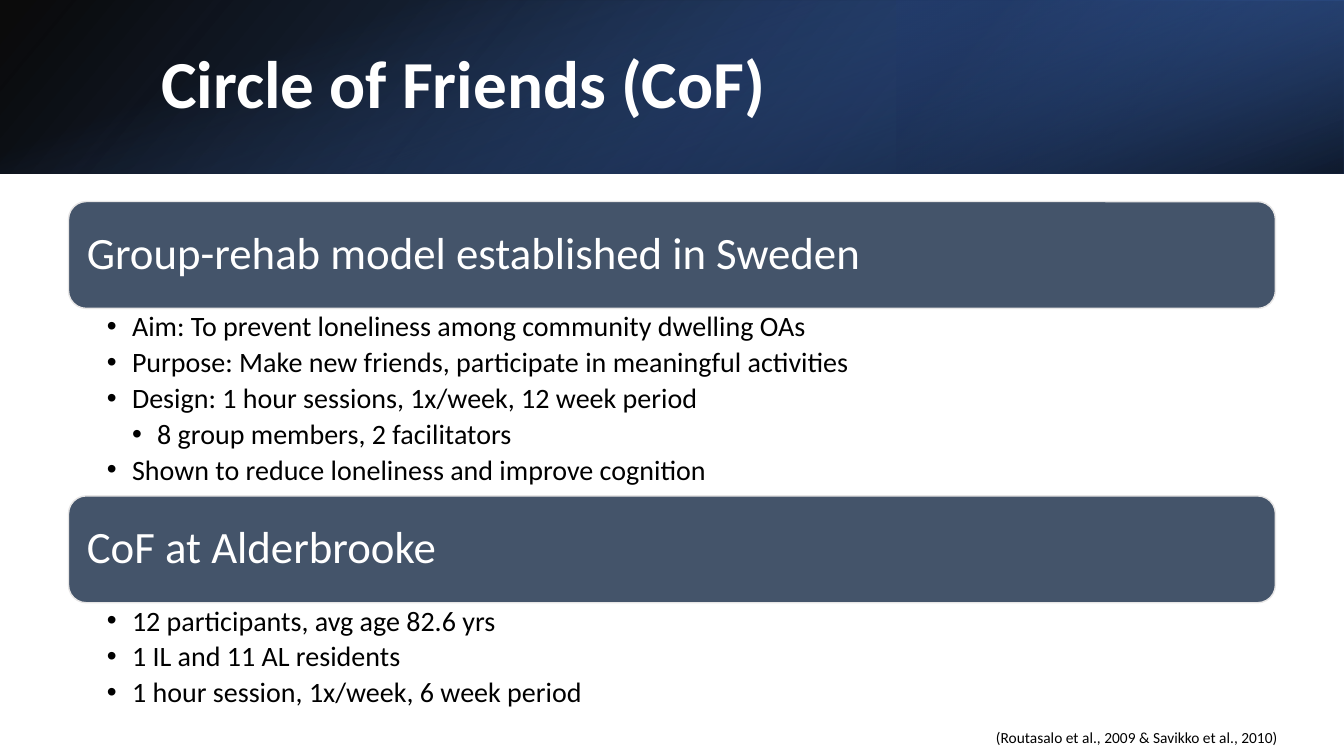
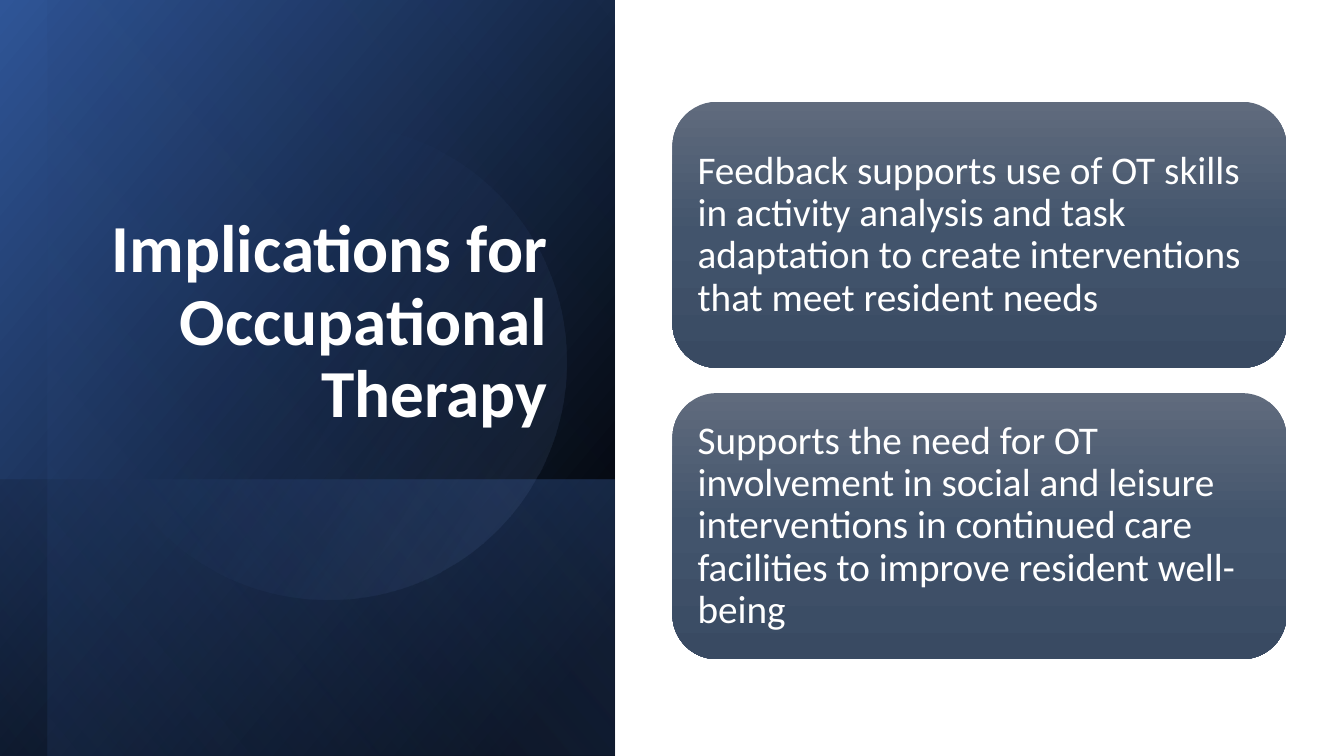
from lxml import etree
from pptx import Presentation
from pptx.dml.color import RGBColor
from pptx.enum import shapes, text
from pptx.oxml import parse_xml
from pptx.oxml.ns import nsdecls, qn
from pptx.util import Inches, Pt

COLORS = {
    "white": "FFFFFF", "black": "000000", "navy": "203864", "deep": "2F5597",
    "blue": "4472C4", "light": "8FAADC", "slate": "44546A", "edge": "E7E6E6",
    "card_top": "606B7D", "card_mid": "42546C", "card_end": "394A62",
}
FONT = "Calibri"
KIND = shapes.MSO_SHAPE


def add_panel(slide, kind, box, stops, angle=0, rotation=0, flip=False):
    """Add a shape filled by (position %, colour, opacity %) stops; one stop is solid."""
    panel = slide.shapes.add_shape(kind, *map(Inches, box))
    panel.shadow.inherit = False
    panel.rotation = rotation
    panel.line.fill.background()
    if flip:
        panel._element.spPr.find(qn("a:xfrm")).set("flipH", "1")
    if len(stops) == 1:
        panel.fill.solid()
        panel.fill.fore_color.rgb = RGBColor.from_string(COLORS[stops[0][1]])
        return panel
    gradient = parse_xml(f'<a:gradFill {nsdecls("a")} rotWithShape="1"><a:gsLst/>'
                         f'<a:lin ang="{angle * 60000}" scaled="0"/></a:gradFill>')
    for position, color, opacity in stops:
        stop = etree.SubElement(gradient[0], qn("a:gs"), pos=str(position * 1000))
        tint = etree.SubElement(stop, qn("a:srgbClr"), val=COLORS[color])
        etree.SubElement(tint, qn("a:alpha"), val=str(opacity * 1000))
    panel._element.spPr.find(qn("a:prstGeom")).addnext(gradient)
    return panel


def write(shape, lines, size, color="white", bold=False, spacing=0.9, after=0,
          align=text.PP_ALIGN.LEFT, anchor=text.MSO_ANCHOR.MIDDLE,
          insets=(0.1, 0.05, 0.1, 0.05), bullets=False):
    """Fill a shape with (level, wording) lines."""
    frame = shape.text_frame
    frame.word_wrap = True
    frame.vertical_anchor = anchor
    (frame.margin_left, frame.margin_top,
     frame.margin_right, frame.margin_bottom) = map(Inches, insets)
    for number, (level, wording) in enumerate(lines):
        line = frame.add_paragraph() if number else frame.paragraphs[0]
        line.alignment, line.level = align, level
        line.line_spacing, line.space_after = spacing, Pt(after)
        if bullets:
            props = line._p.get_or_add_pPr()
            props.set("marL", str(Inches(0.25 * (level + 1))))
            props.set("indent", str(Inches(-0.25)))
            etree.SubElement(props, qn("a:buFont"), typeface="Arial")
            etree.SubElement(props, qn("a:buChar"), char="•")
        run = line.add_run()
        run.text = wording
        run.font.name, run.font.size, run.font.bold = FONT, Pt(size), bold
        run.font.color.rgb = RGBColor.from_string(COLORS[color])


deck = Presentation()
deck.slide_width, deck.slide_height = Inches(13.33), Inches(7.5)
blank = deck.slide_layouts[6]

# Backdrop panels, title and its placement for each slide
SLIDES = [
    ([(KIND.RECTANGLE, (0, 0, 13.33, 1.72),
       [(0, "black", 96), (100, "deep", 100)], 140, 0, True),
      (KIND.RECTANGLE, (8.89, 0, 4.44, 1.72),
       [(19, "navy", 68), (100, "blue", 79)], 320, 180, True),
      (KIND.RECTANGLE, (5.8, -5.8, 1.72, 13.33),
       [(23, "blue", 0), (99, "black", 74)], 340, 90, False)],
     "Circle of Friends (CoF)", (1.5, 0.38, 10.98, 0.96),
     text.PP_ALIGN.LEFT, text.MSO_ANCHOR.MIDDLE),
    ([(KIND.RECTANGLE, (-0.7, 0.7, 7.5, 6.1),
       [(8, "black", 100), (100, "deep", 100)], 50, 90, True),
      (KIND.RECTANGLE, (1.67, 3.08, 2.74, 6.1),
       [(2, "blue", 29), (100, "black", 30)], 130, 90, True),
      (KIND.RECTANGLE, (-0.46, 0.93, 7.5, 5.63),
       [(0, "black", 0), (99, "blue", 11)], 130, 90, True),
      (KIND.OVAL, (0.9, 1.23, 4.72, 4.72),
       [(39, "blue", 0), (100, "light", 15)], 290, 101.6, False)],
     "Implications for Occupational Therapy", (0.9, 0.64, 4.63, 3.7),
     text.PP_ALIGN.RIGHT, text.MSO_ANCHOR.BOTTOM),
]
pages = []
for backdrop, title, title_box, align, anchor in SLIDES:
    page = deck.slides.add_slide(blank)
    for panel in backdrop:
        add_panel(page, *panel)
    heading = page.shapes.add_textbox(*map(Inches, title_box))
    write(heading, [(0, title)], 48, bold=True, align=align, anchor=anchor)
    pages.append(page)
circle, implications = pages

# Circle of Friends: section bars with bullets below
SECTIONS = [
    (2, 1.85, "Group-rehab model established in Sweden", [
        (0, "Aim: To prevent loneliness among community dwelling OAs"),
        (0, "Purpose: Make new friends, participate in meaningful activities"),
        (0, "Design: 1 hour sessions, 1x/week, 12 week period"),
        (1, "8 group members, 2 facilitators"),
        (0, "Shown to reduce loneliness and improve cognition")]),
    (4.92, 1.12, "CoF at Alderbrooke", [
        (0, "12 participants, avg age 82.6 yrs"),
        (0, "1 IL and 11 AL residents"),
        (0, "1 hour session, 1x/week, 6 week period")]),
]
BAR_HEIGHT = 1.06
for top, height, section, points in SECTIONS:
    bar = add_panel(circle, KIND.ROUNDED_RECTANGLE, (0.68, top, 11.97, BAR_HEIGHT),
                    [(0, "slate", 100)])
    bar.line.color.rgb = RGBColor.from_string(COLORS["edge"])
    bar.line.width = Pt(1)
    write(bar, [(0, section)], 32, insets=(0.13,) * 4)
    details = circle.shapes.add_textbox(
        *map(Inches, (0.68, top + BAR_HEIGHT + 0.01, 11.97, height)))
    write(details, points, 20, "black", after=4, anchor=text.MSO_ANCHOR.TOP,
          insets=(0.38, 0.03, 0.16, 0.03), bullets=True)

# Citation
citation = circle.shapes.add_textbox(*map(Inches, (9.78, 7.17, 3.5, 0.29)))
write(citation, [(0, "(Routasalo et al., 2009 & Savikko et al., 2010)")], 11, "black",
      spacing=1, anchor=text.MSO_ANCHOR.TOP)

# Implications: stacked cards
CARDS = [
    "Feedback supports use of OT skills in activity analysis and task adaptation "
    "to create interventions that meet resident needs",
    "Supports the need for OT involvement in social and leisure interventions in "
    "continued care facilities to improve resident well-being",
]
for row, wording in enumerate(CARDS):
    card = add_panel(implications, KIND.ROUNDED_RECTANGLE,
                     (6.67, 1.01 + row * 2.89, 6.09, 2.64),
                     [(0, "card_top", 100), (50, "card_mid", 100), (100, "card_end", 100)], 90)
    write(card, [(0, wording)], 28, insets=(0.12,) * 4)

deck.save("out.pptx")
